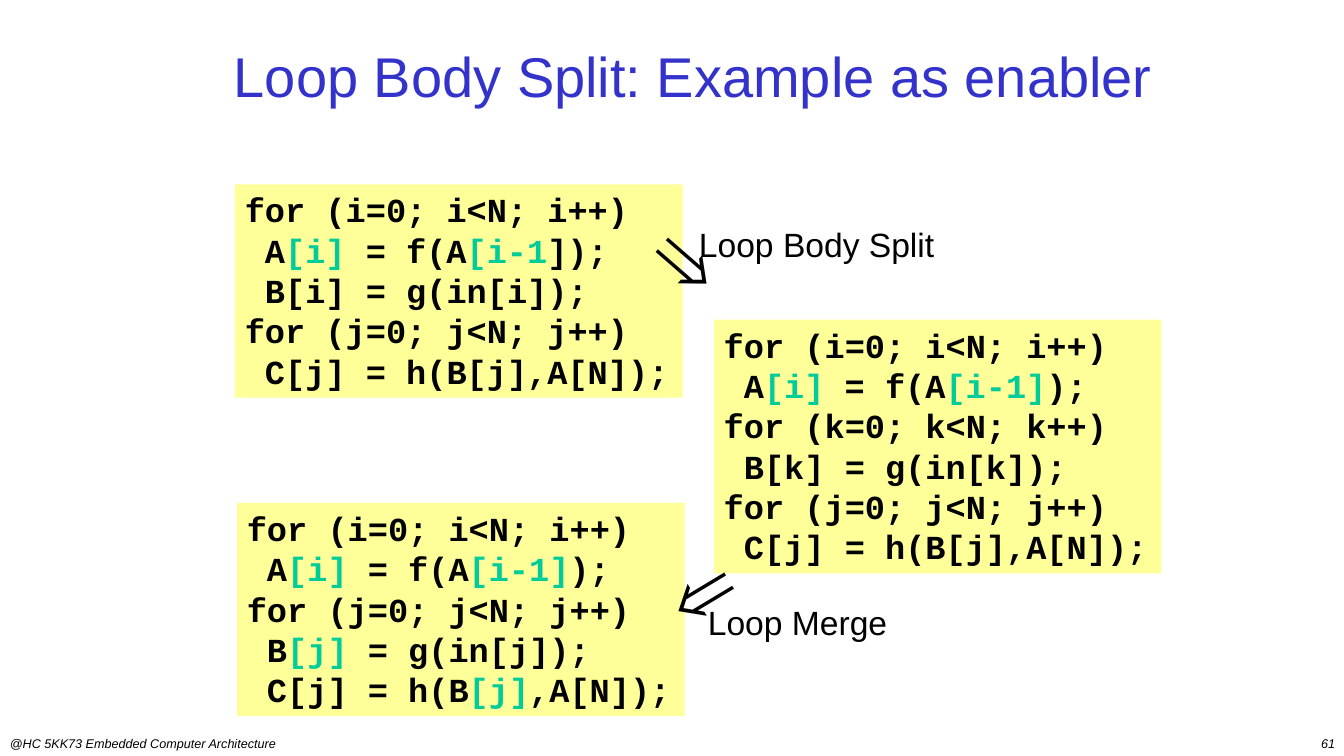
from pptx import Presentation
from pptx import util as u
from pptx.dml.color import RGBColor
from pptx.enum import shapes, text

BLACK = RGBColor(0x00, 0x00, 0x00)
TITLE_BLUE = RGBColor(0x33, 0x33, 0xCC)
CODE_YELLOW = RGBColor(0xFF, 0xFF, 0x99)
INDEX_GREEN = RGBColor(0x00, 0xCC, 0x99)

TITLE_FONT = {"name": "Arial", "size": u.Pt(40), "bold": False}
LABEL_FONT = {"name": "Arial", "size": u.Pt(24)}
FOOTER_FONT = {"name": "Arial", "size": u.Pt(9), "italic": True}
CODE_FONT = {"name": "Courier New", "size": u.Pt(24), "bold": True}
ARROW_FONT = {"name": "Times New Roman", "size": u.Pt(60), "bold": True}

FITTED = {"word_wrap": False, "auto_size": text.MSO_AUTO_SIZE.SHAPE_TO_FIT_TEXT}
LEFT, CENTER, RIGHT = (text.PP_ALIGN.LEFT, text.PP_ALIGN.CENTER,
                       text.PP_ALIGN.RIGHT)
TOP, MIDDLE = text.MSO_ANCHOR.TOP, text.MSO_ANCHOR.MIDDLE

# Bars enclose the highlighted array indices
SOURCE_CODE = """for (i=0; i<N; i++)
 A|[i]| = f(A|[i-1|]);
 B[i] = g(in[i]);
for (j=0; j<N; j++)
 C[j] = h(B[j],A[N]);"""
SPLIT_CODE = """for (i=0; i<N; i++)
 A|[i]| = f(A|[i-1]|);
for (k=0; k<N; k++)
 B[k] = g(in[k]);
for (j=0; j<N; j++)
 C[j] = h(B[j],A[N]);"""
MERGED_CODE = """for (i=0; i<N; i++)
 A|[i]| = f(A|[i-1]|);
for (j=0; j<N; j++)
 B|[j]| = g(in[j]);
 C[j] = h(B|[j]|,A[N]);"""


def set_values(target, values):
    for name, value in values.items():
        setattr(target, name, value)


def add_run(paragraph, words, font, color=BLACK):
    run = paragraph.add_run()
    run.text = words
    set_values(run.font, font)
    run.font.color.rgb = color


def place(box):
    return [u.Inches(length) for length in box]


def add_title(slide, words, box):
    title = slide.shapes.title
    sides = ("left", "top", "width", "height")
    set_values(title, dict(zip(sides, place(box))))
    set_values(title.text_frame, {"vertical_anchor": MIDDLE, "word_wrap": True})
    paragraph = title.text_frame.paragraphs[0]
    paragraph.alignment = CENTER
    add_run(paragraph, words, TITLE_FONT, TITLE_BLUE)


def add_text(slide, words, box, font, frame, align=LEFT, rotation=0):
    shape = slide.shapes.add_textbox(*place(box))
    shape.rotation = rotation
    set_values(shape.text_frame, frame)
    paragraph = shape.text_frame.paragraphs[0]
    paragraph.alignment = align
    add_run(paragraph, words, font)


def add_code(slide, code, left, top):
    lines = code.split("\n")
    box = (left, top, 4.44, 0.1 + 0.403 * len(lines))
    shape = slide.shapes.add_shape(shapes.MSO_SHAPE.RECTANGLE, *place(box))
    shape.shadow.inherit = False
    shape.fill.solid()
    shape.fill.fore_color.rgb = CODE_YELLOW
    shape.line.fill.background()
    frame = shape.text_frame
    set_values(frame, {**FITTED, "vertical_anchor": TOP})
    for number, line in enumerate(lines):
        paragraph = frame.add_paragraph() if number else frame.paragraphs[0]
        paragraph.alignment = LEFT
        for part, words in enumerate(line.split("|")):
            add_run(paragraph, words, CODE_FONT,
                    INDEX_GREEN if part % 2 else BLACK)


def add_step(slide, words, label_box, arrow_top, rotation):
    add_text(slide, "⇒", (6.42, arrow_top, 1.02, 1.1), ARROW_FONT, FITTED,
             rotation=rotation)
    add_text(slide, words, label_box, LABEL_FONT,
             {**FITTED, "vertical_anchor": MIDDLE}, CENTER)


def main():
    presentation = Presentation()
    presentation.slide_width = u.Inches(13.33)
    presentation.slide_height = u.Inches(7.5)
    slide = presentation.slides.add_slide(presentation.slide_layouts[5])

    # Footer and title
    wrapped = {"word_wrap": True}
    add_text(slide, "@HC 5KK73 Embedded Computer Architecture",
             (0, 7.25, 4, 0.25), FOOTER_FONT, wrapped)
    add_text(slide, "61", (10.56, 7.25, 2.78, 0.25), FOOTER_FONT, wrapped, RIGHT)
    add_title(slide, "Loop Body Split: Example as enabler",
              (2.17, 0.33, 9.4, 0.83))

    # Code before and after the split
    add_code(slide, SOURCE_CODE, 2.33, 1.83)
    add_code(slide, SPLIT_CODE, 7.08, 3.17)
    add_step(slide, "Loop Body Split", (6.83, 2.17, 2.54, 0.5), 2.08, 41)

    # Code after the merge
    add_code(slide, MERGED_CODE, 2.35, 4.99)
    add_step(slide, "Loop Merge", (6.92, 5.92, 1.98, 0.5), 5.5, 149)

    presentation.save("out.pptx")


if __name__ == "__main__":
    main()
